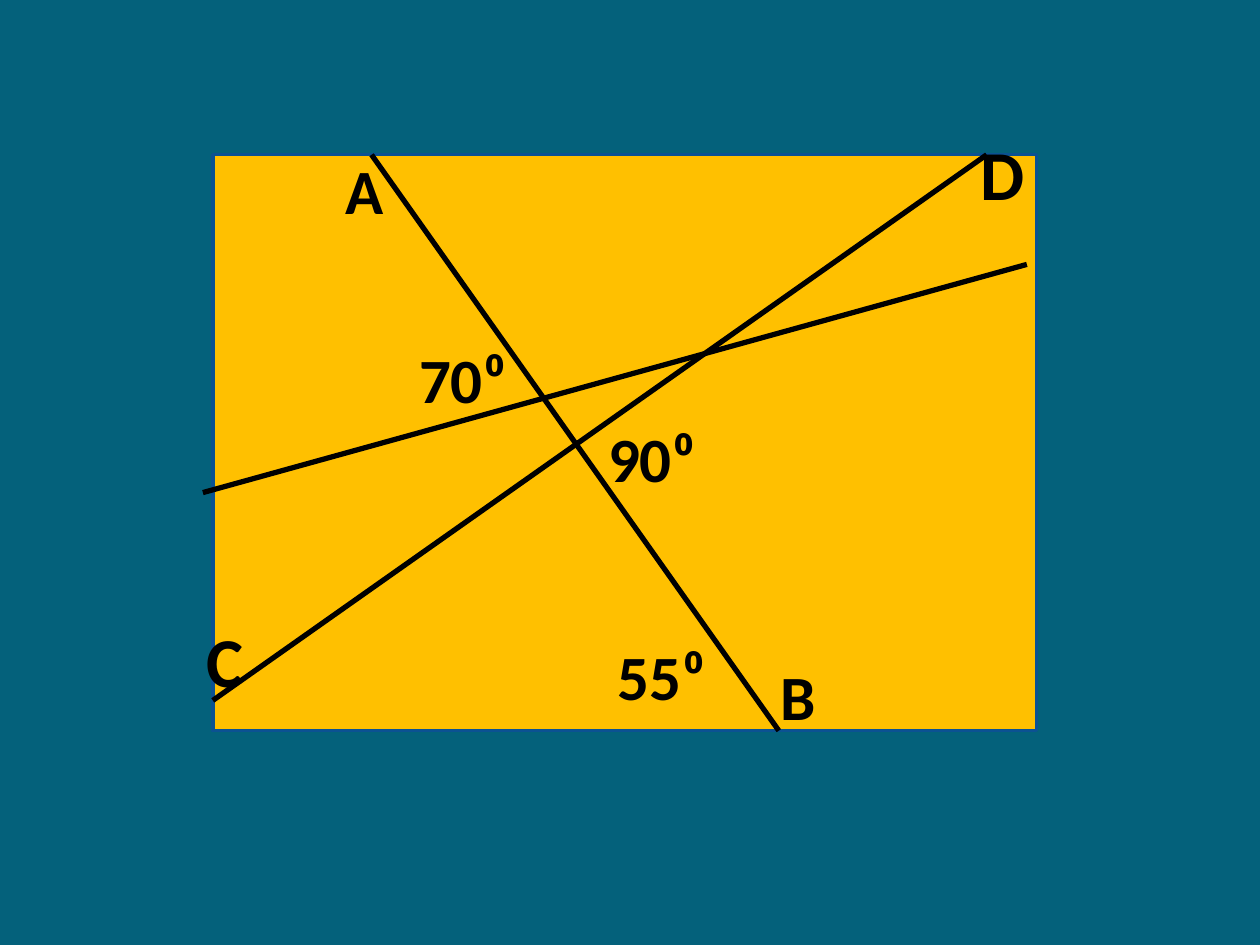
from lxml.etree import SubElement
from pptx import Presentation
from pptx.dml.color import RGBColor
from pptx.enum.shapes import MSO_CONNECTOR as LINK, MSO_SHAPE as SHAPE
from pptx.enum.text import PP_ALIGN as ALIGN
from pptx.oxml.ns import qn
from pptx.util import Cm, Pt

BACK, PANEL, EDGE, INK = "04617B", "FFC000", "0B5292", "000000"
LEFT, TOP, WIDTH, HEIGHT = 4.29, 3.12, 16.61, 11.61
BASE = TOP + HEIGHT

# Start and end of each line, in cm
LINES = [
    ((7.49, TOP), (15.7, BASE)),
    ((4.09, 9.93), (20.7, 5.33)),
    ((LEFT, 14.12), (19.89, TOP)),
]
# Text, left, top in cm
ANGLES = [("70⁰", 7.29, 6.73), ("55⁰", 11.3, 12.73), ("90⁰", 11.1, 8.33)]
POINTS = [("A", 6.71, 2.92), ("B", 15.49, 13.13)]
ENDS = [("C", 3.91, 12.32), ("D", 19.51, 2.51)]


def color(code):
    return RGBColor.from_string(code)


def write(text, x, y, wide=2.21, high=1.8, size=36, align=ALIGN.LEFT):
    frame = slide.shapes.add_textbox(Cm(x), Cm(y), Cm(wide), Cm(high)).text_frame
    frame.word_wrap = True
    para = frame.paragraphs[0]
    para.alignment = align
    run = para.add_run()
    run.text = text
    font = run.font
    font.name, font.size, font.bold = "Calibri", Pt(size), True
    font.color.rgb = color(INK)


def draw(start, end):
    line = slide.shapes.add_connector(LINK.STRAIGHT, *map(Cm, start + end))
    line.line.color.rgb = color(INK)
    line.line.width = Pt(3)
    SubElement(line._element.spPr, qn("a:effectLst"))


deck = Presentation()
deck.slide_width, deck.slide_height = Cm(25.4), Cm(19.05)
slide = deck.slides.add_slide(deck.slide_layouts[6])
slide.background.fill.solid()
slide.background.fill.fore_color.rgb = color(BACK)

panel = slide.shapes.add_shape(SHAPE.RECTANGLE, *map(Cm, (LEFT, TOP, WIDTH, HEIGHT)))
panel.shadow.inherit = False
panel.fill.solid()
panel.fill.fore_color.rgb = color(PANEL)
panel.line.color.rgb = color(EDGE)
panel.line.width = Pt(2)

for start, end in LINES:
    draw(start, end)
for angle in ANGLES:
    write(*angle, wide=3.2, align=ALIGN.RIGHT)
for point in POINTS:
    write(*point)
for point in ENDS:
    write(*point, wide=2.39, high=1.96, size=40)

deck.save("out.pptx")
